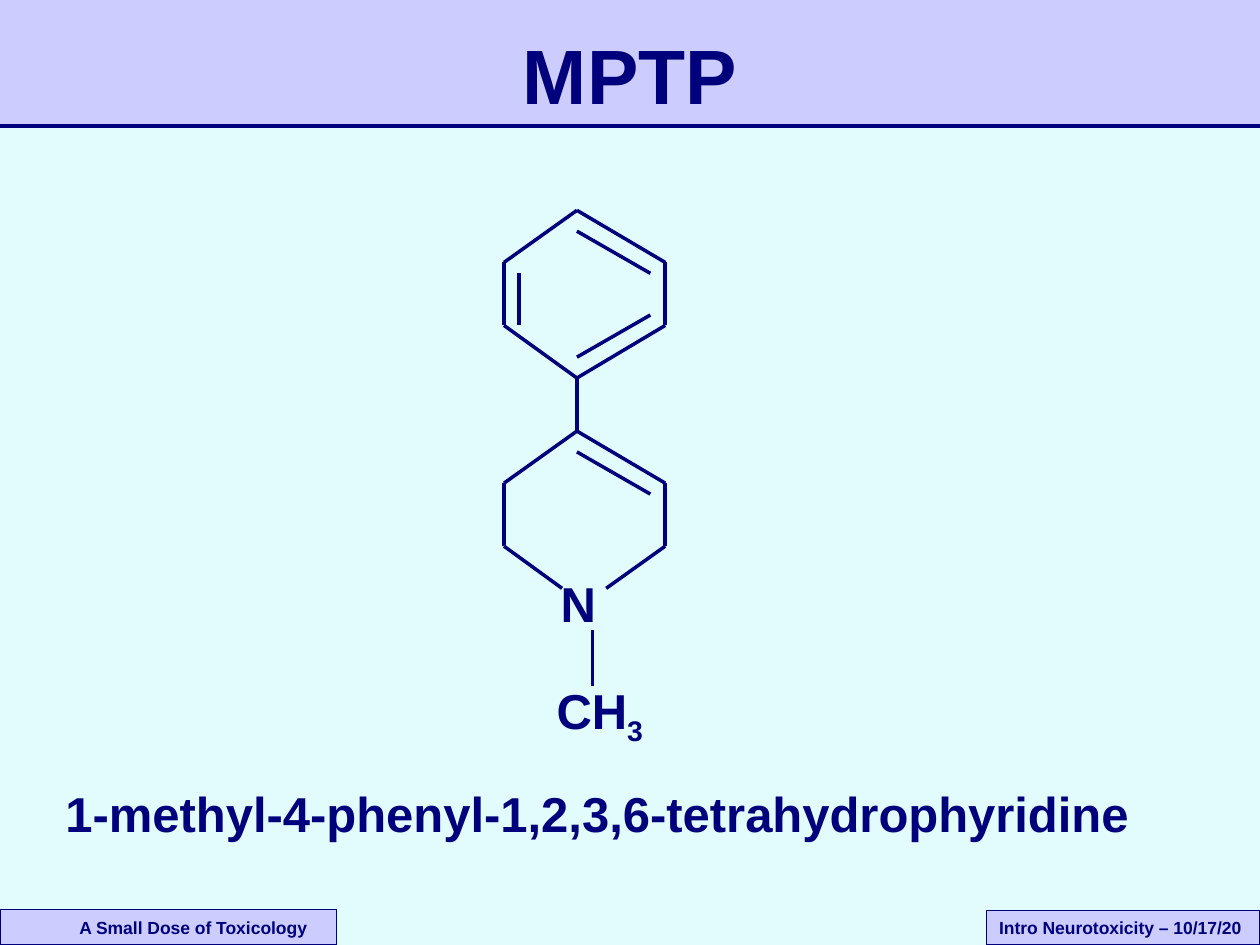
from dataclasses import dataclass

from lxml import etree
from pptx import Presentation
from pptx import util as u
from pptx.dml.color import RGBColor
from pptx.enum import shapes, text
from pptx.oxml.ns import qn
from pptx.util import Cm


@dataclass(frozen=True)
class Theme:
    """Colours, font and type sizes of the slide."""
    ink: RGBColor = RGBColor(0x00, 0x00, 0x7D)
    band: RGBColor = RGBColor(0xCC, 0xCC, 0xFF)
    page: RGBColor = RGBColor(0xE2, 0xFC, 0xFE)
    font: str = "Arial"
    title: int = 44
    body: int = 28
    footer: int = 10
    rule: float = 2
    border: float = 0.75


T = Theme()
W, H = 25.4, 19.05
RING_W, RING_MID = 3.25, 1.47
RING_Y = (0, 1.05, 2.32, 3.38)
RING_STEP = 4.45


def add_line(parent, x1, y1, x2, y2):
    """Draw a straight rule in the ink colour."""
    sp = parent.add_connector(shapes.MSO_CONNECTOR.STRAIGHT,
                              Cm(x1), Cm(y1), Cm(x2), Cm(y2))
    sp.line.color.rgb = T.ink
    sp.line.width = u.Pt(T.rule)
    etree.SubElement(sp._element.spPr, qn("a:effectLst"))
    return sp


def add_rect(parent, x, y, w, h, border=False):
    """Draw a band-coloured rectangle, with a border if asked."""
    sp = parent.add_shape(shapes.MSO_SHAPE.RECTANGLE, Cm(x), Cm(y), Cm(w), Cm(h))
    sp.shadow.inherit = False
    sp.fill.solid()
    sp.fill.fore_color.rgb = T.band
    if border:
        sp.line.color.rgb = T.ink
        sp.line.width = u.Pt(T.border)
    else:
        sp.line.fill.background()
    return sp


def write(sp, words, size, align=text.PP_ALIGN.LEFT, anchor=text.MSO_ANCHOR.TOP):
    """Set bold text in a shape and return its paragraph."""
    tf = sp.text_frame
    tf.word_wrap = True
    tf.vertical_anchor = anchor
    tf.text = words
    p = tf.paragraphs[0]
    p.alignment = align
    for r in p.runs:
        style(r, size)
    return p


def style(r, size):
    """Give a run the theme's font and colour."""
    r.font.name, r.font.size, r.font.bold = T.font, u.Pt(size), True
    r.font.color.rgb = T.ink


def add_label(parent, words, size, x, y, w, h, **kw):
    """Add a text box and return its paragraph."""
    return write(parent.add_textbox(Cm(x), Cm(y), Cm(w), Cm(h)), words, size, **kw)


def add_header(parent, x, y, w, h):
    """Draw the title band, its rule and the title."""
    add_rect(parent, x, y, w, h)
    add_line(parent, x, y + h, x + w, y + h)
    add_label(parent, "MPTP", T.title, x + 1.9, y + 0.43, w - 3.8, h - 0.43,
              align=text.PP_ALIGN.CENTER, anchor=text.MSO_ANCHOR.MIDDLE)


def add_footer(parent, words, x, y, w, h, indent):
    """Draw one bordered footer box."""
    sp = add_rect(parent, x, y, w, h, border=True)
    write(sp, words, T.footer, anchor=text.MSO_ANCHOR.MIDDLE)
    tf = sp.text_frame
    tf.margin_left = Cm(indent)
    tf.margin_right = tf.margin_top = tf.margin_bottom = 0


def add_molecule(parent, x, y):
    """Draw the two rings, their bonds and the atom labels."""
    g = parent.add_group_shape().shapes
    top, upper, lower, bottom = RING_Y
    mid, right, inner = RING_MID, RING_W, RING_W - 0.3
    ring = [(mid, top, 0, upper), (mid, top, right, upper),
            (0, upper, 0, lower), (right, upper, right, lower),
            (mid, top + 0.42, inner, upper + 0.22)]
    phenyl = [(0, lower, mid, bottom), (mid, bottom, right, lower),
              (0.3, upper + 0.22, 0.3, lower),
              (mid, bottom - 0.42, inner, lower - 0.21),
              (mid, bottom, mid, RING_STEP)]
    pyridine = [(0, lower, 1.17, 3.17), (2.06, 3.17, right, lower),
                (1.78, 4.01, 1.78, 5.13)]
    for dy, bonds in ((0, ring + phenyl), (RING_STEP, ring + pyridine)):
        for x1, y1, x2, y2 in bonds:
            add_line(g, x + x1, y + dy + y1, x + x2, y + dy + y2)
    add_label(g, "N", T.body, x + 0.89, y + 7.19, 1.7, 1.42)
    p = add_label(g, "CH", T.body, x + 0.81, y + 9.35, 3.23, 1.42)
    r = p.add_run()
    r.text = "3"
    style(r, T.body)
    r._r.get_or_add_rPr().set("baseline", "-25000")


def main():
    """Build the slide and save it."""
    prs = Presentation()
    prs.slide_width, prs.slide_height = Cm(W), Cm(H)
    slide = prs.slides.add_slide(prs.slide_layouts[6])
    slide.background.fill.solid()
    slide.background.fill.fore_color.rgb = T.page
    parts = slide.shapes
    add_header(parts, 0, 0, W, 2.54)
    add_footer(parts, "A Small Dose of Toxicology", 0, 18.34, 6.78, 0.71, 1.6)
    add_footer(parts, "Intro Neurotoxicity – 10/17/20", 19.89, 18.36, 5.51, 0.69, 0.25)
    add_molecule(parts, 10.16, 4.24)
    add_label(parts, "1-methyl-4-phenyl-1,2,3,6-tetrahydrophyridine", T.body,
              1.07, 15.67, 23.29, 1.45)
    prs.save("out.pptx")


if __name__ == "__main__":
    main()
